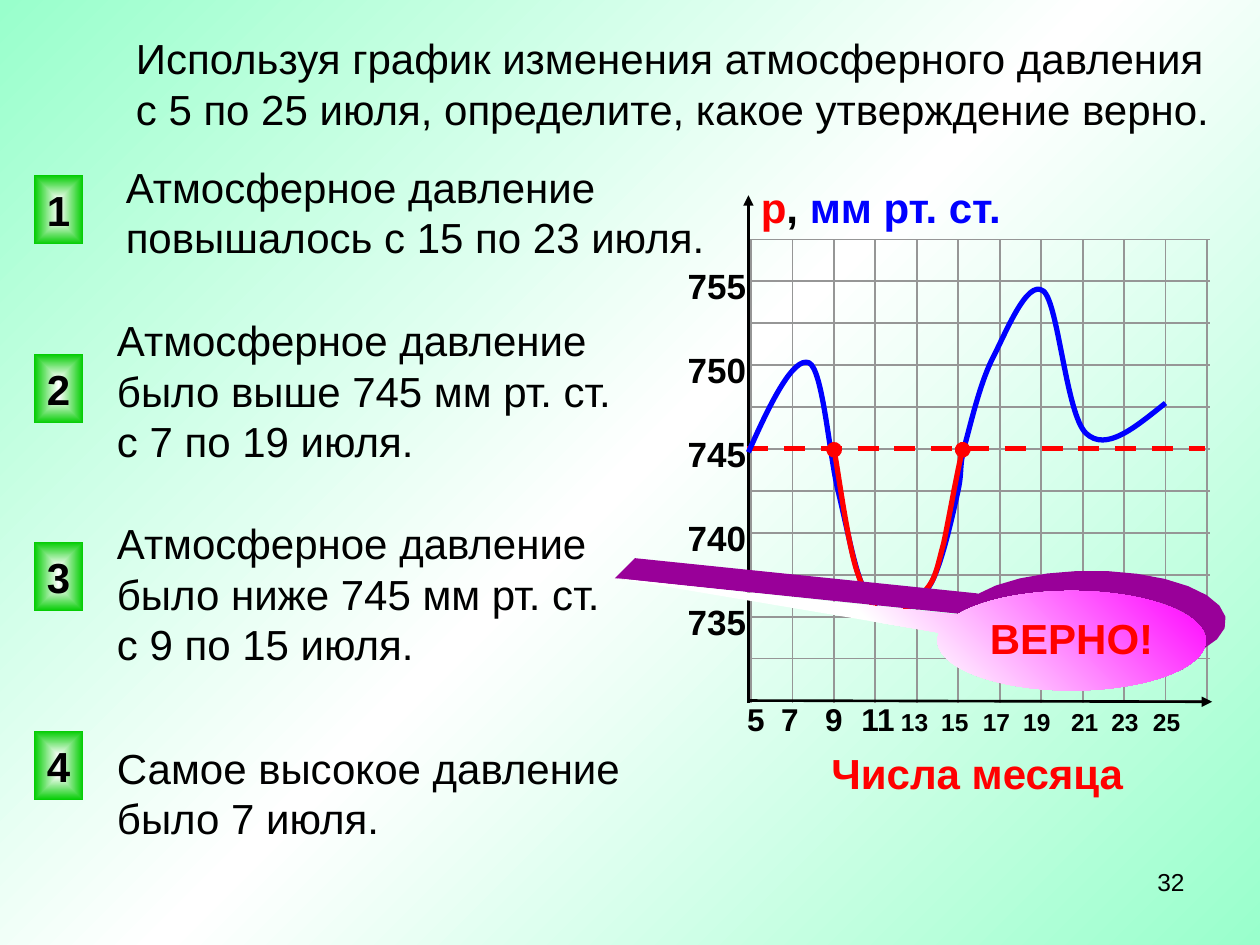
from math import cos, radians, sin

from lxml.etree import SubElement
from pptx import Presentation
from pptx.dml.color import RGBColor
from pptx.enum.dml import MSO_LINE
from pptx.enum.shapes import MSO_CONNECTOR, MSO_SHAPE
from pptx.enum.text import MSO_ANCHOR, PP_ALIGN
from pptx.oxml import parse_xml
from pptx.oxml.ns import nsdecls, qn
from pptx.util import Inches, Pt


def write(shape, paragraphs, size=24, spacing=None, align=PP_ALIGN.LEFT, anchor=MSO_ANCHOR.TOP, wrap=False):
    frame = shape.text_frame
    frame.word_wrap = wrap
    frame.vertical_anchor = anchor
    for index, runs in enumerate(paragraphs):
        paragraph = frame.paragraphs[0] if index == 0 else frame.add_paragraph()
        paragraph.alignment = align
        paragraph.line_spacing = Pt(spacing or size * 1.2)
        for text, color, bold, *run_size in runs:
            run = paragraph.add_run()
            run.text = text
            run.font.name = "Arial"
            run.font.size = Pt(run_size[0] if run_size else size)
            run.font.bold = bold
            run.font.color.rgb = RGBColor.from_string(color)


def set_gradient(fill, owner, stops, direction):
    fill.solid()
    solid = owner.find(".//" + qn("a:solidFill"))
    stop_xml = "".join(
        f'<a:gs pos="{pos * 1000}"><a:srgbClr val="{color}"/></a:gs>' for pos, color in stops
    )
    gradient = f'<a:gradFill {nsdecls("a")} rotWithShape="1"><a:gsLst>{stop_xml}</a:gsLst>{direction}</a:gradFill>'
    solid.getparent().replace(solid, parse_xml(gradient))


presentation = Presentation()
presentation.slide_width = Inches(10)
presentation.slide_height = Inches(7.5)
slide = presentation.slides.add_slide(presentation.slide_layouts[6])
shapes = slide.shapes
set_gradient(
    slide.background.fill, slide.element,
    [(0, "99FFCC"), (50, "FFFFFF"), (100, "99FFCC")], '<a:lin ang="2700000" scaled="1"/>',
)

statements = [
    (0.98, 0.21, 8.81, ["Используя график изменения атмосферного давления",
                        "с 5 по 25 июля, определите, какое утверждение верно."]),
    (0.9, 1.23, 4.8, ["Атмосферное давление", "повышалось с 15 по 23 июля."]),
    (0.83, 2.45, 4.29, ["Атмосферное давление", "было выше 745 мм рт. ст.", "с 7 по 19 июля."]),
    (0.83, 4.06, 4.2, ["Атмосферное давление", "было ниже 745 мм рт. ст.", "с 9 по 15 июля."]),
    (0.83, 5.84, 4.28, ["Самое высокое давление", "было 7 июля."]),
]
for left, top, width, lines in statements:
    statement = shapes.add_textbox(Inches(left), Inches(top), Inches(width), Inches(0.1 + 0.4 * len(lines)))
    write(statement, [[(line, "000000", False)] for line in lines])

for number, top in enumerate([1.39, 2.81, 4.3, 5.8], start=1):
    button = shapes.add_shape(
        MSO_SHAPE.ACTION_BUTTON_CUSTOM, Inches(0.27), Inches(top), Inches(0.39), Inches(0.55)
    )
    button.shadow.inherit = False
    button.line.fill.background()
    set_gradient(
        button.fill, button.element, [(0, "FFFFFF"), (100, "00CC00")],
        '<a:path path="rect"><a:fillToRect l="50000" t="50000" r="50000" b="50000"/></a:path>',
    )
    write(button, [[(str(number), "000000", True)]], align=PP_ALIGN.CENTER, anchor=MSO_ANCHOR.MIDDLE)

grid_columns = [5.96 + 3.62 * step / 11 for step in range(12)]
grid_rows = [1.9 + 3.66 * step / 11 for step in range(12)]
chart_lines = [(x, 1.9, x, 5.58, "969696", 1) for x in grid_columns]
chart_lines += [(5.95, y, 9.6, y, "969696", 1) for y in grid_rows]
chart_lines += [
    (5.94, 5.56, 9.62, 5.57, "000000", 1.5),
    (5.94, 5.58, 5.94, 1.55, "000000", 1.5),
    (5.93, 3.56, 9.56, 3.56, "FF0000", 3),
]
for x1, y1, x2, y2, color, width in chart_lines:
    chart_line = shapes.add_connector(
        MSO_CONNECTOR.STRAIGHT, Inches(x1), Inches(y1), Inches(x2), Inches(y2)
    )
    chart_line.line.color.rgb = RGBColor.from_string(color)
    chart_line.line.width = Pt(width)
    if color == "FF0000":
        chart_line.line.dash_style = MSO_LINE.DASH
    if color == "000000":
        SubElement(chart_line.line._get_or_add_ln(), qn("a:tailEnd"), type="triangle")
    SubElement(chart_line.element.spPr, qn("a:effectLst"))

pressure_label = shapes.add_textbox(Inches(5.94), Inches(1.39), Inches(2.26), Inches(0.5))
write(pressure_label, [[("р", "FF0000", True), (", ", "000000", True), ("мм рт. ст.", "0000FF", True)]])
days_label = shapes.add_textbox(Inches(6.5), Inches(5.88), Inches(2.52), Inches(0.5))
write(days_label, [[("Числа месяца", "FF0000", True)]])

pressure_scale = shapes.add_textbox(Inches(5.36), Inches(1.72), Inches(0.66), Inches(3.77))
pressure_scale.text_frame.margin_right = 0
write(pressure_scale, [[(str(value), "000000", True)] for value in range(755, 734, -5)], size=20, spacing=48)

day_scale = shapes.add_textbox(Inches(5.55), Inches(5.51), Inches(3.92), Inches(0.4))
write(
    day_scale,
    [[("\t5\t7\t9\t11", "000000", True), ("\t13\t15\t17\t19\t21\t23\t25", "000000", True, 14)]],
    size=18, wrap=True,
)
tabs = SubElement(day_scale.text_frame.paragraphs[0]._p.get_or_add_pPr(), qn("a:tabLst"))
for x in [6, 6.27, 6.62, 6.97, 7.26, 7.58, 7.91, 8.23, 8.61, 8.93, 9.26]:
    SubElement(tabs, qn("a:tab"), pos=str(Inches(x - 5.65)), algn="ctr")

pressure_curve = [
    (5.94, 3.59), (6.12, 3.18), (6.3, 2.83), (6.42, 2.88), (6.53, 2.93), (6.58, 3.6), (6.65, 3.89),
    (6.72, 4.18), (6.77, 4.45), (6.83, 4.61), (6.9, 4.78), (6.96, 4.87), (7.06, 4.88),
    (7.15, 4.88), (7.3, 4.79), (7.39, 4.63), (7.48, 4.46), (7.56, 4.09), (7.6, 3.91),
    (7.64, 3.73), (7.61, 3.73), (7.65, 3.56), (7.7, 3.38), (7.77, 3.07), (7.87, 2.86),
    (7.98, 2.65), (8.15, 2.21), (8.28, 2.31), (8.4, 2.4), (8.46, 3.29), (8.62, 3.44),
    (8.78, 3.59), (9.01, 3.39), (9.25, 3.2),
]
low_pressure_curve = [
    (6.62, 3.57), (6.65, 3.73), (6.73, 4.31), (6.8, 4.53), (6.87, 4.74), (6.94, 4.85), (7.03, 4.88),
    (7.12, 4.9), (7.28, 4.78), (7.35, 4.68), (7.43, 4.59), (7.44, 4.49), (7.49, 4.31),
    (7.53, 4.12), (7.6, 3.72), (7.64, 3.57),
]
for controls, color in [(pressure_curve, "0000FF"), (low_pressure_curve, "FF0000")]:
    builder = shapes.build_freeform(Inches(controls[0][0]), Inches(controls[0][1]))
    builder.add_line_segments([(Inches(x), Inches(y)) for x, y in controls[1:]], close=False)
    curve = builder.convert_to_shape()
    segments = list(curve.element.iter(qn("a:lnTo")))
    outline = segments[0].getparent()
    for start in range(0, len(segments), 3):
        bezier = SubElement(outline, qn("a:cubicBezTo"))
        for segment in segments[start:start + 3]:
            bezier.append(segment[0])
            outline.remove(segment)
    curve.shadow.inherit = False
    curve.fill.background()
    curve.line.color.rgb = RGBColor.from_string(color)
    curve.line.width = Pt(3)
    if color == "FF0000":
        for end in ("a:headEnd", "a:tailEnd"):
            SubElement(curve.line._get_or_add_ln(), qn(end), type="oval")

depth = 0.16
center_x, center_y, radius_x, radius_y = 8.5, 5.09, 1.07, 0.4
tip_x, tip_y = 4.88, 4.59
rim = [
    (center_x + radius_x * cos(radians(angle)), center_y + radius_y * sin(radians(angle)))
    for angle in range(212, 407, 13)
]
edge = [(tip_x + depth, tip_y - depth), (7.6 + depth, 4.87 - depth)]
edge += [(x + depth, y - depth) for x, y in rim]
edge += [rim[-1], (center_x, center_y), (7.6, 4.87)]
builder = shapes.build_freeform(Inches(tip_x), Inches(tip_y))
builder.add_line_segments([(Inches(x), Inches(y)) for x, y in edge])
callout_depth = builder.convert_to_shape()
callout_depth.shadow.inherit = False
callout_depth.fill.solid()
callout_depth.fill.fore_color.rgb = RGBColor.from_string("990099")
callout_depth.line.fill.background()

callout = shapes.add_shape(MSO_SHAPE.OVAL_CALLOUT, Inches(7.44), Inches(4.69), Inches(2.13), Inches(0.79))
callout.adjustments[0] = -1.7
callout.adjustments[1] = -0.63
callout.shadow.inherit = False
callout.line.fill.background()
set_gradient(
    callout.fill, callout.element,
    [(0, "FFFFFF"), (100, "FF00FF")], '<a:lin ang="18900000" scaled="1"/>',
)
write(
    callout, [[("ВЕРНО!", "FF0000", True)]],
    spacing=25, align=PP_ALIGN.CENTER, anchor=MSO_ANCHOR.MIDDLE, wrap=True,
)

page_number = shapes.add_textbox(Inches(7.17), Inches(6.83), Inches(2.33), Inches(0.52))
write(page_number, [[("32", "000000", False)]], size=14, align=PP_ALIGN.RIGHT, wrap=True)

presentation.save("out.pptx")
